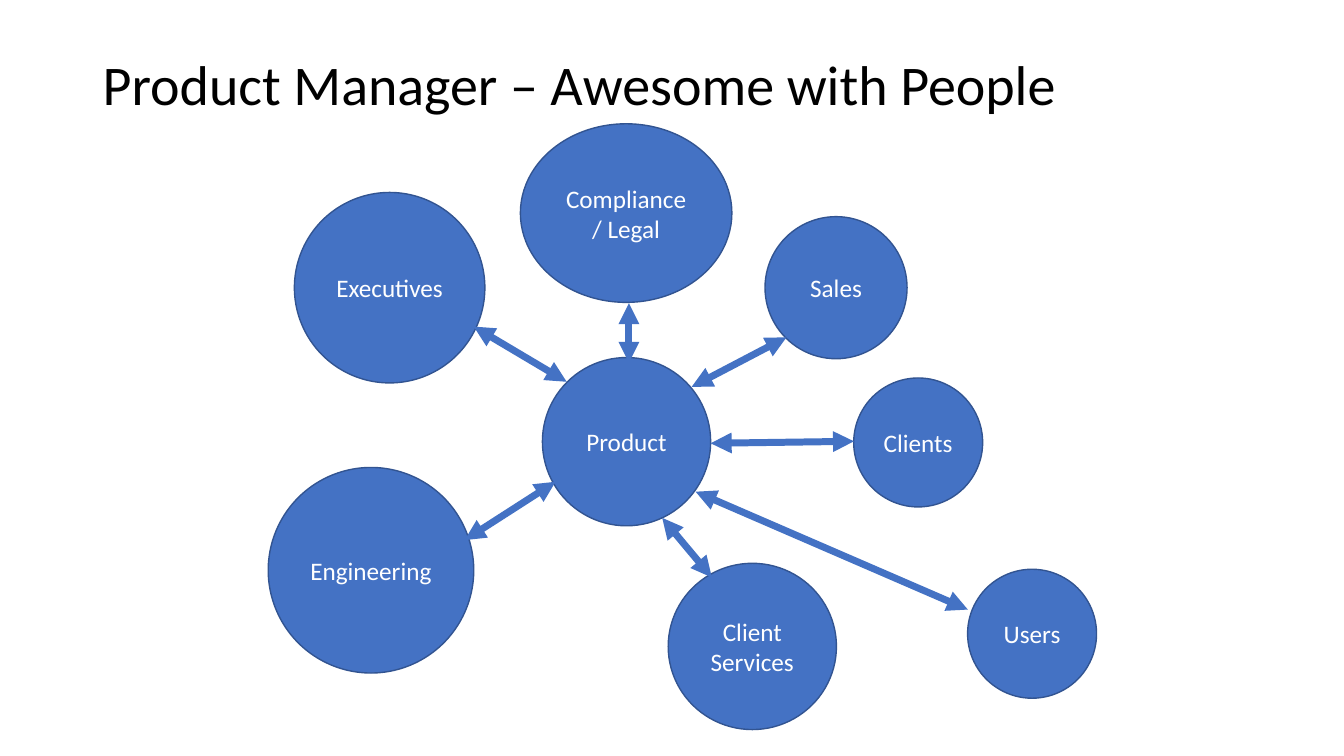
from dataclasses import dataclass
from typing import NamedTuple

from lxml import etree
from pptx import Presentation
from pptx.dml.color import RGBColor
from pptx.enum.shapes import MSO_CONNECTOR, MSO_SHAPE
from pptx.enum.text import MSO_ANCHOR, PP_ALIGN
from pptx.oxml.ns import qn
from pptx.util import Cm, Pt

ELLIPSE = MSO_SHAPE.OVAL
STRAIGHT = MSO_CONNECTOR.STRAIGHT
MIDDLE = MSO_ANCHOR.MIDDLE
CENTER = PP_ALIGN.CENTER
BLANK_LAYOUT = 6


@dataclass(frozen=True)
class Theme:
    font: str = "Calibri"
    title_size: float = 40
    label_size: float = 18
    outline_width: float = 1
    arrow_width: float = 5
    title_color: RGBColor = RGBColor(0x00, 0x00, 0x00)
    label_color: RGBColor = RGBColor(0xFF, 0xFF, 0xFF)
    fill: RGBColor = RGBColor(0x44, 0x72, 0xC4)
    outline: RGBColor = RGBColor(0x32, 0x54, 0x91)


class Box(NamedTuple):
    left: float
    top: float
    width: float
    height: float


class Circle(NamedTuple):
    label: str
    center: tuple
    size: tuple


class Partner(NamedTuple):
    circle: Circle
    arrow_start: tuple
    arrow_end: tuple


THEME = Theme()
TITLE_BOX = Box(2.34, 1.02, 30.12, 2.34)
NETWORK_BOX = Box(6.76, 3.12, 20.88, 15.27)

PRODUCT = Circle("Product", (9.03, 8.01), (4.24, 4.24))
PARTNERS = [
    Partner(Circle("Executives", (3.06, 4.13), (4.8, 4.8)), (5.18, 5.11), (7.52, 6.5)),
    Partner(Circle("Users", (19.25, 12.85), (3.25, 3.25)), (10.77, 9.27), (17.63, 12.24)),
    Partner(Circle("Clients", (16.38, 8.03), (3.25, 3.25)), (11.15, 8.05), (14.76, 8)),
    Partner(Circle("Engineering", (2.59, 11.25), (5.18, 5.18)), (4.95, 10.49), (7.24, 9.02)),
    Partner(Circle("Sales", (14.31, 4.13), (3.58, 3.58)), (10.67, 6.63), (13.06, 5.38)),
    Partner(Circle("Compliance / Legal", (9.02, 2.25), (5.33, 4.5)), (9.09, 6.02), (9.09, 4.52)),
    Partner(Circle("Client Services", (12.2, 13.17), (4.24, 4.19)), (9.93, 9.93), (11.18, 11.43)),
]


def set_text(shape, text, size, color):
    frame = shape.text_frame
    frame.word_wrap = True
    frame.vertical_anchor = MIDDLE
    paragraph = frame.paragraphs[0]
    paragraph.text = text
    paragraph.font.name = THEME.font
    paragraph.font.size = Pt(size)
    paragraph.font.color.rgb = color
    return paragraph


def add_title(slide, box, text):
    shape = slide.shapes.add_textbox(*map(Cm, box))
    paragraph = set_text(shape, text, THEME.title_size, THEME.title_color)
    paragraph.line_spacing = 0.9


def add_circle(slide, box, circle):
    (x, y), (width, height) = circle.center, circle.size
    shape = slide.shapes.add_shape(
        ELLIPSE,
        Cm(box.left + x - width / 2),
        Cm(box.top + y - height / 2),
        Cm(width),
        Cm(height),
    )
    shape.shadow.inherit = False
    shape.fill.solid()
    shape.fill.fore_color.rgb = THEME.fill
    shape.line.color.rgb = THEME.outline
    shape.line.width = Pt(THEME.outline_width)
    paragraph = set_text(shape, circle.label, THEME.label_size, THEME.label_color)
    paragraph.alignment = CENTER


def add_double_arrow(slide, box, start, end):
    points = [
        Cm(origin + offset)
        for point in (start, end)
        for origin, offset in zip((box.left, box.top), point)
    ]
    connector = slide.shapes.add_connector(STRAIGHT, *points)
    connector.line.color.rgb = THEME.fill
    connector.line.width = Pt(THEME.arrow_width)
    properties = connector._element.spPr
    line = properties.find(qn("a:ln"))
    for tag in ("a:headEnd", "a:tailEnd"):
        etree.SubElement(line, qn(tag), type="triangle")
    etree.SubElement(properties, qn("a:effectLst"))


def add_network(slide, box, hub, partners):
    add_circle(slide, box, hub)
    for partner in partners:
        add_circle(slide, box, partner.circle)
    for partner in partners:
        add_double_arrow(slide, box, partner.arrow_start, partner.arrow_end)


def main():
    presentation = Presentation()
    presentation.slide_width = Cm(33.87)
    presentation.slide_height = Cm(19.05)
    slide = presentation.slides.add_slide(presentation.slide_layouts[BLANK_LAYOUT])
    add_title(slide, TITLE_BOX, "Product Manager – Awesome with People")
    add_network(slide, NETWORK_BOX, PRODUCT, PARTNERS)
    presentation.save("out.pptx")


if __name__ == "__main__":
    main()
